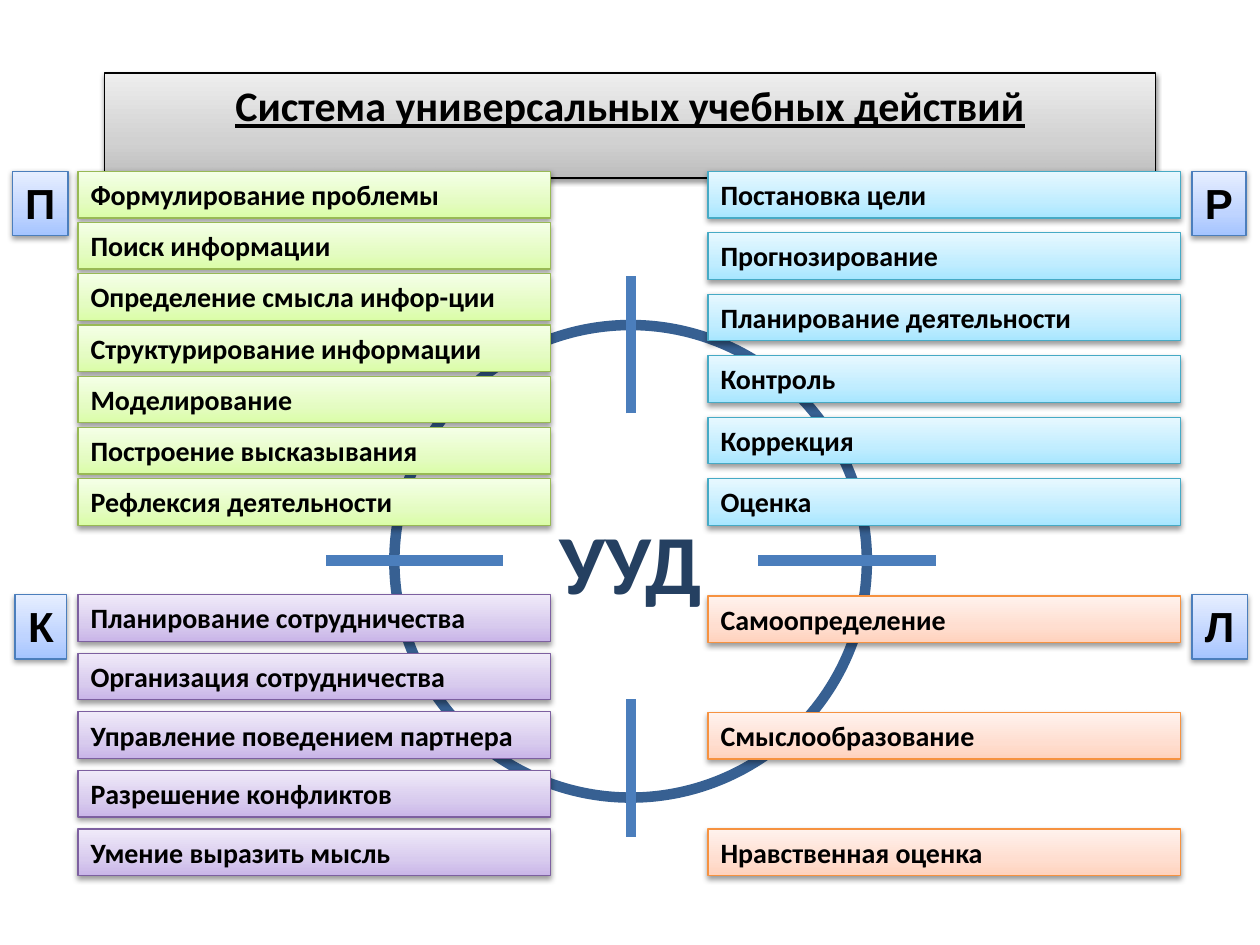
from copy import deepcopy

from lxml import etree
from pptx import Presentation
from pptx.dml.color import RGBColor
from pptx.enum import shapes, text
from pptx.oxml.ns import qn
from pptx.util import Inches, Pt

# Content
TITLE = "Система универсальных учебных действий"
HUB = "УУД"
# palette, left, first top, last top, items
GROUPS = [
    ("green", 0.62, 1.36, 3.8, [
        "Формулирование проблемы", "Поиск информации",
        "Определение смысла инфор-ции", "Структурирование информации",
        "Моделирование", "Построение высказывания", "Рефлексия деятельности"]),
    ("purple", 0.62, 4.72, 6.58, [
        "Планирование сотрудничества", "Организация сотрудничества",
        "Управление поведением партнера", "Разрешение конфликтов",
        "Умение выразить мысль"]),
    ("cyan", 5.62, 1.36, 3.8, [
        "Постановка цели", "Прогнозирование", "Планирование деятельности",
        "Контроль", "Коррекция", "Оценка"]),
    ("orange", 5.62, 4.73, 6.58, [
        "Самоопределение", "Смыслообразование", "Нравственная оценка"]),
]
# letter, left, top, width
BADGES = [("П", 0.1, 1.36, 0.44), ("К", 0.12, 4.72, 0.41),
          ("Р", 9.46, 1.36, 0.43), ("Л", 9.46, 4.72, 0.44)]
# from x, from y, to x, to y
SPOKES = [(2.59, 4.45, 3.99, 4.45), (6.02, 4.45, 7.43, 4.45),
          (5.01, 3.28, 5.01, 2.19), (5.01, 6.64, 5.01, 5.55)]

THEME = {
    # gradient from bottom to top, then outline
    "gray": (["BDBDBD", "D1D1D1", "EEEEEE"], "000000"),
    "green": (["DAFDA7", "E4FCC2", "F5FFE7"], "98B955"),
    "purple": (["C9B5E8", "D8CBEE", "F0EAF9"], "7D60A0"),
    "cyan": (["A7E6FF", "C1EDFF", "E7F8FF"], "46AAC5"),
    "orange": (["FFD2BD", "FFDED0", "FFF2ED"], "F69240"),
    "blue": (["A4C4FF", "BFD4FF", "E6EEFF"], "4B7EBC"),
    "ink": "000000", "ring": "376092", "hub": "254061", "spoke": "4B7EBC",
    "font": "Calibri", "badge_font": "Arial",
    "title": 24, "item": 16, "badge": 24, "hub_size": 48,
}
STOPS = (0, 0.35, 1)
ITEM_W, ITEM_H, BADGE_H = 3.75, 0.37, 0.51


def outline(shape, color, width):
    shape.line.color.rgb = RGBColor.from_string(color)
    shape.line.width = Pt(width)


def write(shape, words, size, color=THEME["ink"], font=THEME["font"],
          align=text.PP_ALIGN.LEFT, anchor=text.MSO_ANCHOR.TOP):
    tf = shape.text_frame
    tf.text = words
    tf.word_wrap = True
    tf.vertical_anchor = anchor
    p = tf.paragraphs[0]
    p.alignment = align
    f = p.runs[0].font
    f.name, f.size, f.bold = font, Pt(size), True
    f.color.rgb = RGBColor.from_string(color)
    return tf


def decorate(shape, palette):
    """Three-stop gradient, thin outline and a soft shadow below."""
    colors, edge = THEME[palette]
    shape.fill.gradient()
    shape.fill.gradient_angle = 90
    stops = shape._element.spPr.find(".//" + qn("a:gsLst"))
    stops.append(deepcopy(stops[0]))
    for stop, position, color in zip(shape.fill.gradient_stops, STOPS, colors):
        stop.position = position
        stop.color.rgb = RGBColor.from_string(color)
    outline(shape, edge, 0.75)
    shape.shadow.inherit = False
    effects = shape._element.spPr.find(qn("a:effectLst"))
    shadow = etree.SubElement(effects, qn("a:outerShdw"), blurRad="40000",
                              dist="20000", dir="5400000", rotWithShape="0")
    black = etree.SubElement(shadow, qn("a:srgbClr"), val="000000")
    etree.SubElement(black, qn("a:alpha"), val="38000")


def add_box(slide, left, top, width, height, palette):
    sp = slide.shapes.add_shape(shapes.MSO_SHAPE.RECTANGLE, Inches(left),
                                Inches(top), Inches(width), Inches(height))
    decorate(sp, palette)
    return sp


def add_title(slide):
    sp = slide.shapes.title
    sp.left, sp.top = Inches(0.83), Inches(0.58)
    sp.width, sp.height = Inches(8.34), Inches(0.51)
    decorate(sp, "gray")
    tf = write(sp, TITLE, THEME["title"], align=text.PP_ALIGN.CENTER)
    tf.auto_size = text.MSO_AUTO_SIZE.SHAPE_TO_FIT_TEXT
    tf.paragraphs[0].runs[0].font.underline = True


def add_wheel(slide):
    wheel = slide.shapes.add_group_shape().shapes
    ring = wheel.add_shape(shapes.MSO_SHAPE.OVAL, Inches(3.13), Inches(2.58),
                           Inches(3.75), Inches(3.75))
    ring.fill.background()
    ring.shadow.inherit = False
    outline(ring, THEME["ring"], 6)
    write(ring, HUB, THEME["hub_size"], THEME["hub"],
          align=text.PP_ALIGN.CENTER, anchor=text.MSO_ANCHOR.MIDDLE)
    for ends in SPOKES:
        spoke = wheel.add_connector(shapes.MSO_CONNECTOR.STRAIGHT,
                                    *(Inches(v) for v in ends))
        outline(spoke, THEME["spoke"], 6)
        etree.SubElement(spoke._element.spPr, qn("a:effectLst"))


def main():
    prs = Presentation()
    prs.slide_width, prs.slide_height = Inches(10), Inches(7.5)
    slide = prs.slides.add_slide(prs.slide_layouts[5])

    add_title(slide)
    add_wheel(slide)

    # Four lists, evenly spaced between first and last top
    for palette, left, first, last, items in GROUPS:
        step = (last - first) / (len(items) - 1)
        for i, item in enumerate(items):
            sp = add_box(slide, left, first + i * step, ITEM_W, ITEM_H, palette)
            tf = write(sp, item, THEME["item"])
            tf.auto_size = text.MSO_AUTO_SIZE.SHAPE_TO_FIT_TEXT

    # Letter badges beside the lists
    for letter, left, top, width in BADGES:
        sp = add_box(slide, left, top, width, BADGE_H, "blue")
        tf = write(sp, letter, THEME["badge"], font=THEME["badge_font"],
                   align=text.PP_ALIGN.CENTER)
        tf.word_wrap = False
        tf.auto_size = text.MSO_AUTO_SIZE.SHAPE_TO_FIT_TEXT

    prs.save("out.pptx")


if __name__ == "__main__":
    main()
